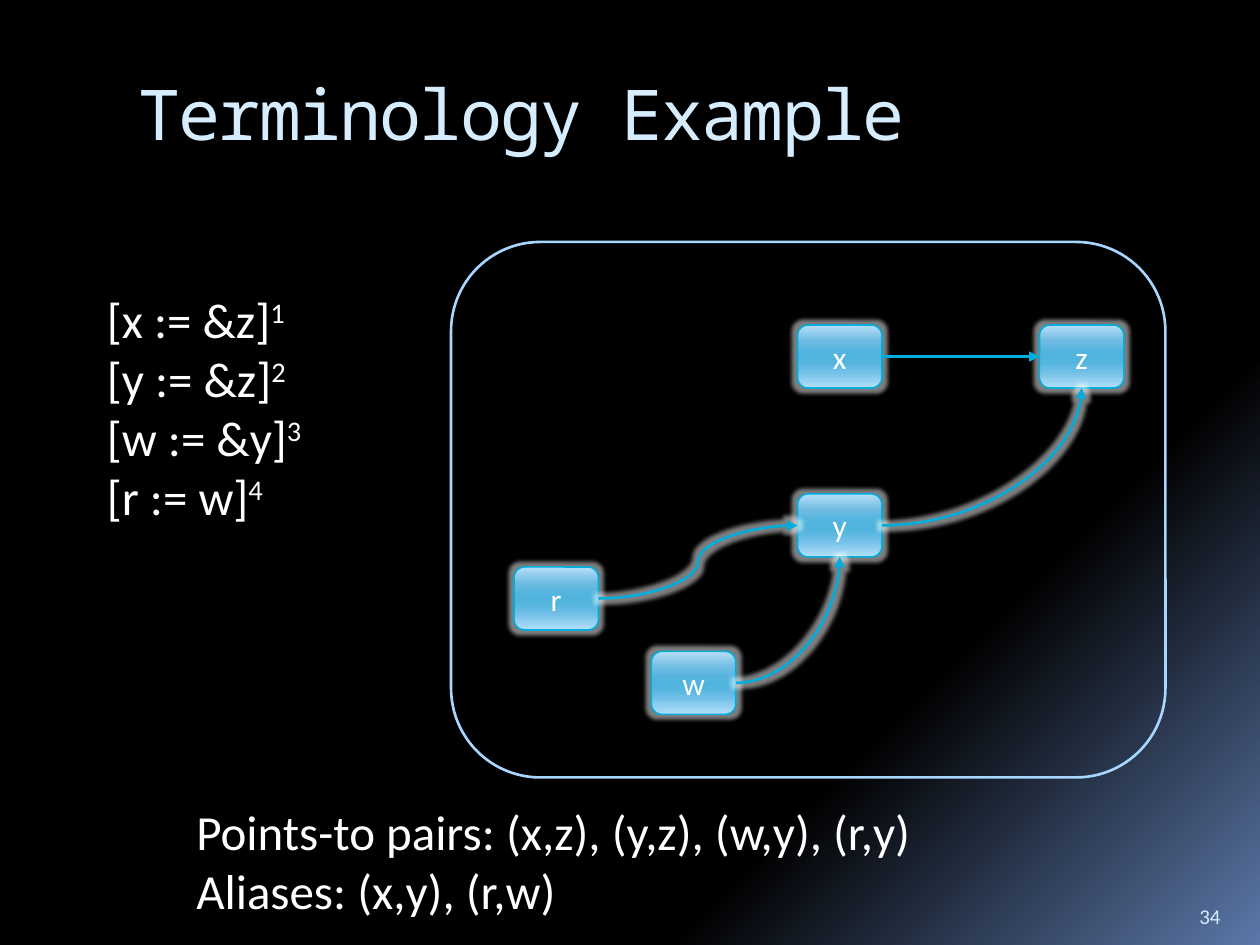
"""Build the points-to terminology slide."""

import dataclasses
import typing

import lxml.etree
import pptx
import pptx.dml.color
import pptx.enum.shapes
import pptx.enum.text
import pptx.oxml.ns
import pptx.util

Inches = pptx.util.Inches
Pt = pptx.util.Pt
RGB = pptx.dml.color.RGBColor.from_string
qn = pptx.oxml.ns.qn
Shape = pptx.enum.shapes.MSO_SHAPE
Link = pptx.enum.shapes.MSO_CONNECTOR
Align = pptx.enum.text.PP_ALIGN
Anchor = pptx.enum.text.MSO_ANCHOR
Stops = tuple[tuple[int, str], ...]
Box = tuple[float, float, float, float]


@dataclasses.dataclass(frozen=True)
class Theme:
    sans: str = "Calibri"
    mono: str = "Noto Sans Mono"
    title: int = 40
    body: int = 28
    label: int = 18
    small: int = 12
    white: str = "FFFFFF"
    pale: str = "D6ECFF"
    frame: str = "A7D6FF"
    line: str = "00ADDC"
    back: Stops = ((65, "000000"), (73, "000000"), (100, "5B77A8"))
    gloss: Stops = ((0, "B7DFF8"), (25, "70BCE2"), (40, "55B5DF"), (50, "50B4DF"),
                    (60, "55B5DF"), (75, "72C0E7"), (100, "B4DFFB"))


@dataclasses.dataclass(frozen=True)
class Node:
    name: str
    left: float
    top: float


@dataclasses.dataclass(frozen=True)
class Arrow:
    start: str
    end: str
    site: int
    form: str
    glow: bool = True


THEME = Theme()
TOP, LEFT, BOTTOM, RIGHT = range(4)
WIDE, HIGH = 0.67, 0.5
NODES = (Node("z", 8.25, 2.58), Node("x", 6.33, 2.58), Node("y", 6.33, 3.92),
         Node("w", 5.17, 5.17), Node("r", 4.08, 4.5))
ARROWS = (Arrow("x", "z", LEFT, "straightConnector1", glow=False),
          Arrow("y", "z", BOTTOM, "curvedConnector2"),
          Arrow("w", "y", BOTTOM, "curvedConnector2"),
          Arrow("r", "y", LEFT, "curvedConnector3"))
CODE = ("[x := &z]^1", "[y := &z]^2", "[w := &y]^3", "[r := w]^4")
FACTS = ("Points-to pairs: (x,z), (y,z), (w,y), (r,y)", "Aliases: (x,y), (r,w)")


def add(root: typing.Any, tag: str, **attrs: str) -> typing.Any:
    return lxml.etree.SubElement(root, qn(tag), attrs)


def blend(fill: typing.Any, root: typing.Any, stops: Stops, angle: int) -> None:
    fill.gradient()
    grad = root.find(".//" + qn("a:gradFill"))
    for child in list(grad):
        grad.remove(child)
    group = add(grad, "a:gsLst")
    for place, color in stops:
        add(add(group, "a:gs", pos=str(place * 1000)), "a:srgbClr", val=color)
    add(grad, "a:lin", ang=str(angle * 60000), scaled="0")


def shine(root: typing.Any) -> None:
    glow = add(root, "a:glow", rad="63500")
    add(add(glow, "a:srgbClr", val=THEME.white), "a:alpha", val="50000")


def write(frame: typing.Any, *lines: str, size: int = THEME.body, font: str = THEME.sans,
          color: str = THEME.white, align: typing.Any = Align.LEFT,
          anchor: typing.Any = Anchor.TOP, wrap: bool = False, track: int = 0) -> None:
    frame.word_wrap, frame.vertical_anchor = wrap, anchor
    for spot, line in enumerate(lines):
        para = frame.add_paragraph() if spot else frame.paragraphs[0]
        para.alignment = align
        base, _, power = line.partition("^")
        for text, lift in ((base, 0), (power, 30)):
            if not text:
                continue
            run = para.add_run()
            run.text = text
            run.font.size, run.font.name = Pt(size), font
            run.font.color.rgb = RGB(color)
            traits = run._r.get_or_add_rPr()
            if lift:
                traits.set("baseline", str(lift * 1000))
            if track:
                traits.set("spc", str(track * 100))


def text_box(slide: typing.Any, box: Box) -> typing.Any:
    return slide.shapes.add_textbox(*map(Inches, box)).text_frame


def round_box(slide: typing.Any, box: Box, color: str, width: float) -> typing.Any:
    shape = slide.shapes.add_shape(Shape.ROUNDED_RECTANGLE, *map(Inches, box))
    shape.shadow.inherit = False
    shape.fill.background()
    shape.line.color.rgb, shape.line.width = RGB(color), Pt(width)
    return shape


def draw_node(slide: typing.Any, node: Node) -> typing.Any:
    shape = round_box(slide, (node.left, node.top, WIDE, HIGH), THEME.line, 0.94)
    blend(shape.fill, shape.element.spPr, THEME.gloss, 90)
    shine(shape.element.spPr.find(qn("a:effectLst")))
    write(shape.text_frame, node.name, size=THEME.label, align=Align.CENTER,
          anchor=Anchor.MIDDLE, wrap=True)
    return shape


def draw_arrow(slide: typing.Any, arrow: Arrow, shapes: dict[str, typing.Any]) -> None:
    link = slide.shapes.add_connector(Link.CURVE, 0, 0, 0, 0)
    link.begin_connect(shapes[arrow.start], RIGHT)
    link.end_connect(shapes[arrow.end], arrow.site)
    link.line.color.rgb, link.line.width = RGB(THEME.line), Pt(1.5)
    props = link.element.spPr
    props.find(qn("a:prstGeom")).set("prst", arrow.form)
    add(props.find(qn("a:ln")), "a:tailEnd", type="triangle")
    effects = add(props, "a:effectLst")
    if arrow.glow:
        shine(effects)


def main() -> None:
    deck = pptx.Presentation()
    deck.slide_width, deck.slide_height = Inches(10), Inches(7.5)
    slide = deck.slides.add_slide(deck.slide_layouts[6])
    blend(slide.background.fill, slide.element, THEME.back, 45)

    title = text_box(slide, (1, 0.56, 8.5, 1))
    title.margin_top = Inches(0)
    write(title, "Terminology Example", size=THEME.title, font=THEME.mono,
          color=THEME.pale, wrap=True, track=-1)
    write(text_box(slide, (9.42, 7.02, 0.5, 0.4)), "34", size=THEME.small,
          color=THEME.pale, anchor=Anchor.BOTTOM, wrap=True)
    write(text_box(slide, (0.75, 2.25, 1.76, 2.3)), *CODE)
    write(text_box(slide, (1.46, 6.31, 6.14, 1.04)), *FACTS)

    shapes = {node.name: draw_node(slide, node) for node in NODES}
    for arrow in ARROWS:
        draw_arrow(slide, arrow, shapes)
    round_box(slide, (3.58, 1.92, 5.67, 4.25), THEME.frame, 1.5)
    deck.save("out.pptx")


if __name__ == "__main__":
    main()
